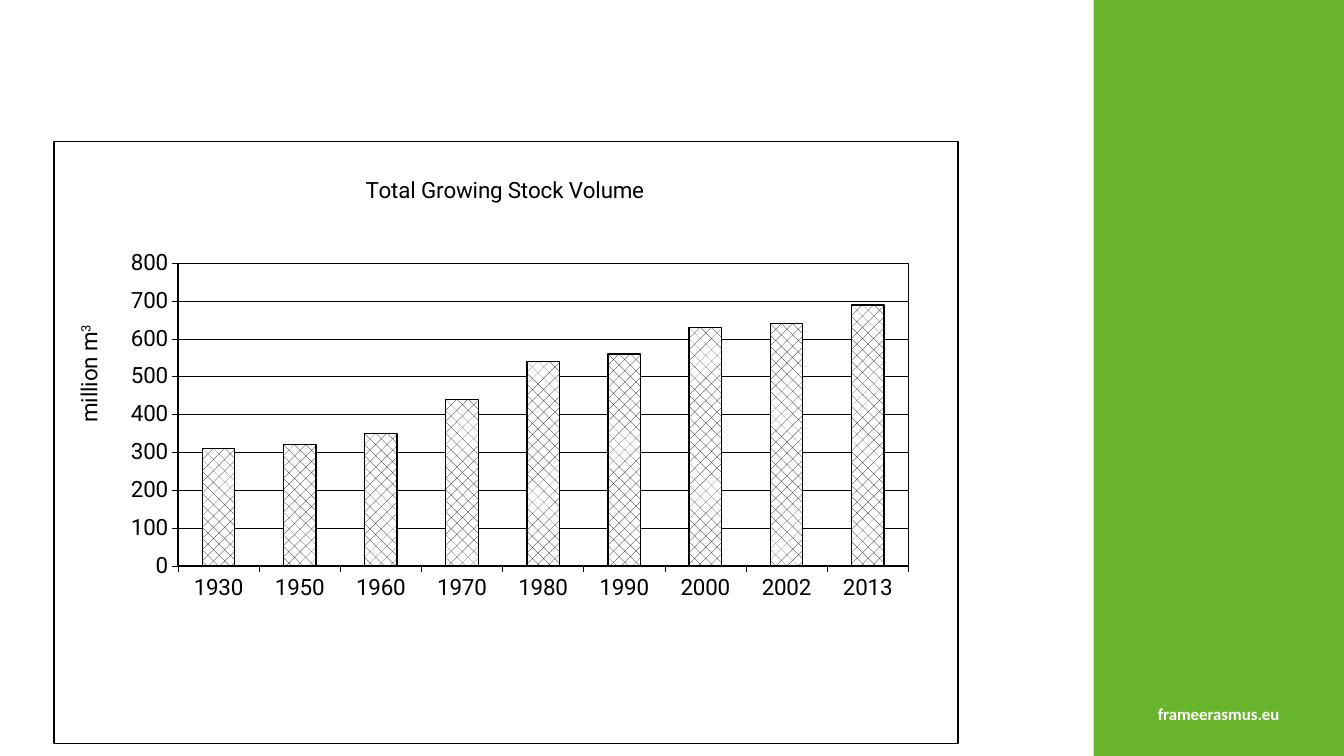
from pptx import Presentation
from pptx.chart.data import CategoryChartData
from pptx.dml.color import RGBColor
from pptx.enum.chart import XL_CHART_TYPE, XL_TICK_MARK
from pptx.enum.dml import MSO_PATTERN
from pptx.enum.shapes import MSO_SHAPE
from pptx.enum.text import MSO_ANCHOR, PP_ALIGN
from pptx.oxml import parse_xml
from pptx.oxml.ns import nsdecls, qn
from pptx.util import Pt

SITE = "frameerasmus.eu"
TITLE = [("Total Growing Stock Volume", False)]
UNIT = [("million m", False), ("3", True)]
STOCK = {
    "1930": 310, "1950": 320, "1960": 350, "1970": 440, "1980": 540,
    "1990": 560, "2000": 630, "2002": 640, "2013": 690,
}
THEME = {
    "green": RGBColor(0x69, 0xB4, 0x2D),
    "white": RGBColor(0xFF, 0xFF, 0xFF),
    "black": RGBColor(0, 0, 0),
    "site": ("Calibri", 12),
    "chart": ("Roboto", 16),
    "thin": 0.25,
    "bold": 1,
}
WIDTH, HEIGHT = 960, 540
BAND = 781.2
CHART = (38.2, 100.8, 646.6, 430.6)
PLOT = (0.137, 0.202, 0.808, 0.503)


def style(font, face, color, bold=False):
    font.name, font.size = face[0], Pt(face[1])
    font.color.rgb, font.bold = color, bold


def write(frame, runs, face, color, bold=False, align=PP_ALIGN.CENTER):
    """Fill a frame with (text, raised) runs in one format."""
    para = frame.paragraphs[0]
    para.alignment = align
    for text, raised in runs:
        run = para.add_run()
        run.text = text
        style(run.font, face, color, bold)
        if raised:
            run.font._element.set("baseline", "30000")


def stroke(line, width):
    line.color.rgb, line.width = THEME["black"], Pt(width)


def place(x, y, w=None, h=None):
    """Make a manual chart layout from fractions of the chart area."""
    tags = [("xMode", "edge"), ("yMode", "edge"), ("x", x), ("y", y)]
    if w:
        tags = [("layoutTarget", "inner")] + tags + [("w", w), ("h", h)]
    body = "".join(f'<c:{tag} val="{val}"/>' for tag, val in tags)
    return parse_xml(f'<c:layout {nsdecls("c")}><c:manualLayout>{body}'
                     '</c:manualLayout></c:layout>')


def frame_xml(fill, width):
    """Make the fill and black border of a chart area."""
    paint = (f'<a:solidFill><a:srgbClr val="{fill}"/></a:solidFill>'
             if fill else "<a:noFill/>")
    return parse_xml(
        f'<c:spPr {nsdecls("c", "a")}>{paint}<a:ln w="{Pt(width)}">'
        f'<a:solidFill><a:srgbClr val="{THEME["black"]}"/></a:solidFill>'
        '</a:ln></c:spPr>')


def drop(parent, tag):
    for child in parent.findall(qn(tag)):
        parent.remove(child)


def add_title(title, runs, x, y):
    write(title.text_frame, runs, THEME["chart"], THEME["black"])
    root = title._element
    drop(root, "c:layout")
    root.find(qn("c:tx")).addnext(place(x, y))


def add_band(slide):
    band = slide.shapes.add_shape(MSO_SHAPE.RECTANGLE, Pt(BAND), 0,
                                  Pt(WIDTH - BAND), Pt(HEIGHT))
    band.shadow.inherit = False
    band.fill.solid()
    band.fill.fore_color.rgb = THEME["green"]
    band.line.fill.background()
    box = slide.shapes.add_textbox(Pt(BAND), Pt(499), Pt(WIDTH - BAND), Pt(21.8))
    box.text_frame.word_wrap = True
    box.text_frame.vertical_anchor = MSO_ANCHOR.TOP
    write(box.text_frame, [(SITE, False)], THEME["site"], THEME["white"], bold=True)


def add_stock(slide):
    data = CategoryChartData()
    data.categories = list(STOCK)
    data.add_series("Series 1", list(STOCK.values()))
    chart = slide.shapes.add_chart(XL_CHART_TYPE.COLUMN_CLUSTERED,
                                   *map(Pt, CHART), data).chart
    style(chart.font, THEME["chart"], THEME["black"])
    chart.has_legend = False
    chart.has_title = True
    add_title(chart.chart_title, TITLE, 0.34, 0.05)

    for axis in (chart.category_axis, chart.value_axis):
        axis.major_tick_mark = XL_TICK_MARK.OUTSIDE
        axis.minor_tick_mark = XL_TICK_MARK.NONE
        style(axis.tick_labels.font, THEME["chart"], THEME["black"])
        stroke(axis.format.line, THEME["thin"])
    scale = chart.value_axis
    scale.minimum_scale, scale.maximum_scale, scale.major_unit = 0, 800, 100
    scale.has_major_gridlines = True
    stroke(scale.major_gridlines.format.line, THEME["thin"])
    scale.has_title = True
    add_title(scale.axis_title, UNIT, 0.02, 0.3)

    plot = chart.plots[0]
    plot.gap_width, plot.vary_by_categories = 150, False
    bars = plot.series[0].format
    bars.fill.patterned()
    bars.fill.pattern = MSO_PATTERN.PERCENT_25
    bars.fill.fore_color.rgb = THEME["black"]
    bars.fill.back_color.rgb = THEME["white"]
    stroke(bars.line, THEME["bold"])

    root = chart.element.find(qn("c:chart"))
    root.addnext(frame_xml(THEME["white"], THEME["bold"]))
    area = root.find(qn("c:plotArea"))
    drop(area, "c:layout")
    area.insert(0, place(*PLOT))
    area.append(frame_xml(None, THEME["bold"]))


def main():
    deck = Presentation()
    deck.slide_width, deck.slide_height = Pt(WIDTH), Pt(HEIGHT)
    slide = deck.slides.add_slide(deck.slide_layouts[6])
    add_band(slide)
    add_stock(slide)
    deck.save("out.pptx")


if __name__ == "__main__":
    main()
